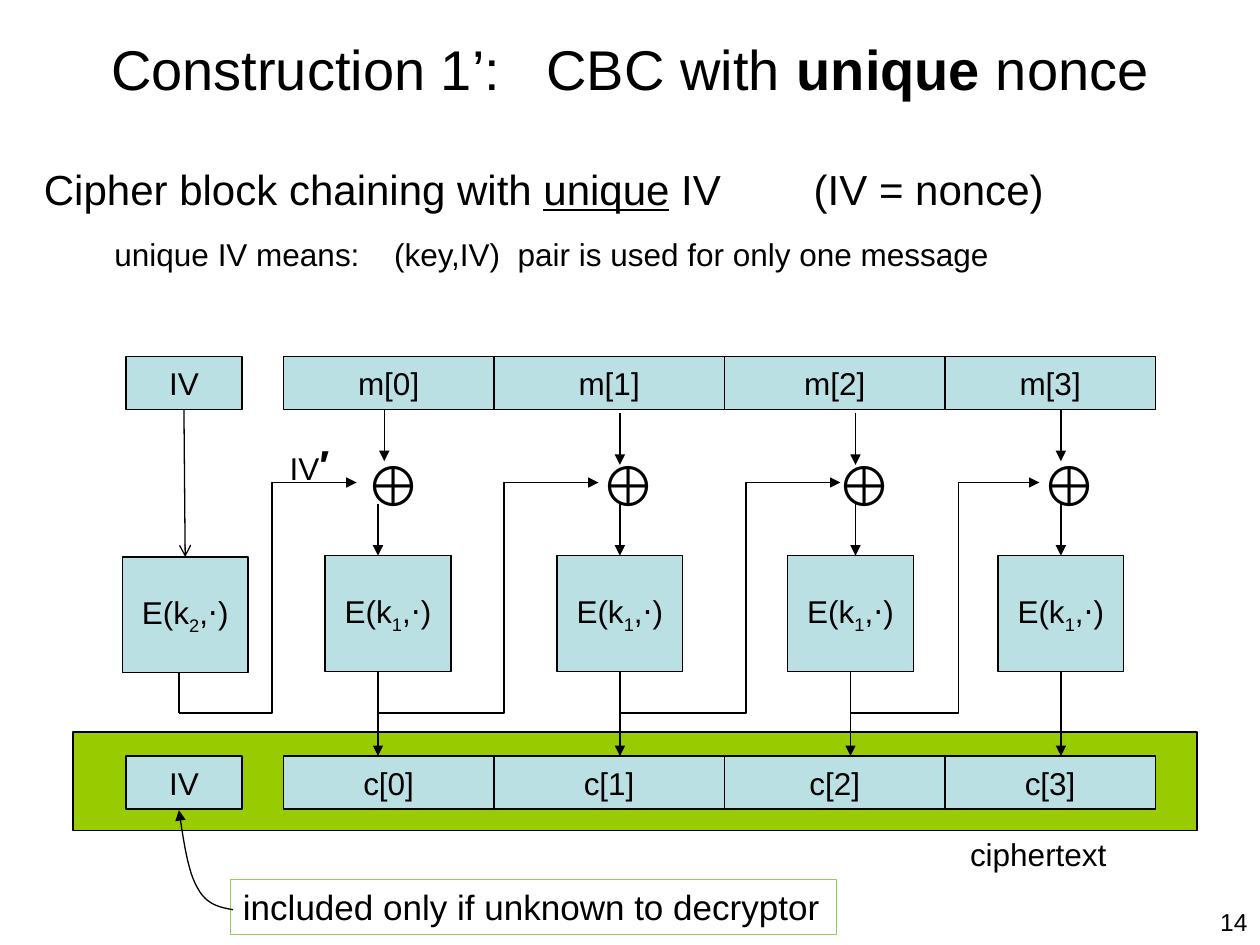
from lxml import etree
from pptx import Presentation
from pptx.dml.color import RGBColor
from pptx.enum import shapes, text
from pptx.oxml.ns import qn
from pptx.util import Inches, Pt

# ---- Content: a run is text or (text, format) ----
TITLE = ["Construction 1’:   CBC with ", ("unique", {"bold": True}), " nonce"]
HEADLINE = ["Cipher block chaining with ", ("unique", {"underline": True}), " IV\t(IV = nonce)"]
MEANING = ["unique IV means:\t(key,IV)  pair is used for only one message"]
IV_PRIME = ["IV", ("′", {"bold": True, "size": 23.9})]
NOTE = "included only if unknown to decryptor"
PAGE_NUMBER = "14"

COLORS = {"ink": "000000", "cell": "BBE0E3", "band": "99CC00", "note": "92D050"}
FONT = "Arial"

# ---- Geometry in inches ----
CELL_EDGES = [2.25, 3.92, 5.75, 7.5, 9.17]
CELL_HEIGHT = 0.42
ROWS = {"m": 2.83, "c": 6}
CIPHER_TOP, CIPHER_WIDTH, CIPHER_HEIGHT = 4.41, 1, 0.92
CIPHER_BOTTOM = CIPHER_TOP + CIPHER_HEIGHT
CHAIN_TOP, CHAIN_BOTTOM = 3.83, 5.66
COLUMNS = [
    {"cipher": 2.58, "message": (3.05, 3.25), "xor_out": 3, "output": 3},
    {"cipher": 4.42, "message": (4.92, 3.28), "xor_out": 4.92, "output": 4.92},
    {"cipher": 6.25, "message": (6.79, 3.28), "xor_out": 6.79, "output": 6.75},
    {"cipher": 7.92, "message": (8.42, 3.25), "xor_out": 8.42, "output": 8.42},
]
CHAINS = [(1.42, 2.16, 2.83), (3, 4, 4.75), (4.92, 5.92, 6.67), (6.75, 7.61, 8.25)]
NOTE_CURVES = [
    [(1.85, 7.22), (1.74, 7.2), (1.64, 7.18), (1.57, 7.05)],
    [(1.57, 7.05), (1.49, 6.92), (1.46, 6.68), (1.42, 6.43)],
]

deck = Presentation()
deck.slide_width, deck.slide_height = Inches(10), Inches(7.5)
page = deck.slides.add_slide(deck.slide_layouts[6])


def color(name):
    return RGBColor.from_string(COLORS[name])


def write(box, runs, size=18, align="LEFT", anchor="TOP", wrap=False, grow=False,
          before=0, tab=None):
    """Fill a shape with one paragraph of formatted runs."""
    frame = box.text_frame
    frame.word_wrap = wrap
    frame.vertical_anchor = getattr(text.MSO_ANCHOR, anchor)
    frame.auto_size = text.MSO_AUTO_SIZE.SHAPE_TO_FIT_TEXT if grow else text.MSO_AUTO_SIZE.NONE
    para = frame.paragraphs[0]
    para.alignment = getattr(text.PP_ALIGN, align)
    para.space_before = Pt(before)
    if tab:
        stops = etree.SubElement(para._p.get_or_add_pPr(), qn("a:tabLst"))
        etree.SubElement(stops, qn("a:tab"), pos=str(Inches(tab)), algn="l")
    for run in [runs] if isinstance(runs, str) else runs:
        words, style = (run, {}) if isinstance(run, str) else run
        span = para.add_run()
        span.text = words
        span.font.name = FONT
        span.font.size = Pt(style.get("size", size))
        span.font.bold = style.get("bold")
        span.font.underline = style.get("underline")
        span.font.color.rgb = color("ink")
        if "baseline" in style:
            span._r.get_or_add_rPr().set("baseline", str(style["baseline"]))


def label(place, runs, **style):
    write(page.shapes.add_textbox(*map(Inches, place)), runs, **style)


def rectangle(place, fill=None, line="ink"):
    box = page.shapes.add_shape(shapes.MSO_SHAPE.RECTANGLE, *map(Inches, place))
    box.shadow.inherit = False
    if fill:
        box.fill.solid()
        box.fill.fore_color.rgb = color(fill)
    else:
        box.fill.background()
    box.line.color.rgb = color(line)
    box.line.width = Pt(0.75)
    return box


def cell(place, runs):
    write(rectangle(place, "cell"), runs, align="CENTER", anchor="MIDDLE")


def cipher(left, top, key):
    cell((left, top, CIPHER_WIDTH, CIPHER_HEIGHT),
         ["E(k", (key, {"baseline": -25000}), ",⋅)"])


def finish_line(item, head):
    item.line.color.rgb = color("ink")
    item.line.width = Pt(0.75)
    if head:
        etree.SubElement(item.line._get_or_add_ln(), qn("a:tailEnd"), type=head)


def arrow(x1, y1, x2, y2, head="triangle"):
    link = page.shapes.add_connector(
        shapes.MSO_CONNECTOR.STRAIGHT, *map(Inches, (x1, y1, x2, y2)))
    finish_line(link, head)
    etree.SubElement(link._element.spPr, qn("a:effectLst"))


def route(points):
    start, *rest = [(Inches(x), Inches(y)) for x, y in points]
    builder = page.shapes.build_freeform(*start)
    builder.add_line_segments(rest, close=False)
    outline = builder.convert_to_shape()
    outline.shadow.inherit = False
    outline.fill.background()
    finish_line(outline, "triangle")


def curve_points(controls, steps=12):
    """Sample a cubic Bezier curve."""
    for step in range(steps + 1):
        t = step / steps
        weights = ((1 - t) ** 3, 3 * t * (1 - t) ** 2, 3 * t * t * (1 - t), t ** 3)
        yield tuple(sum(w * p[axis] for w, p in zip(weights, controls)) for axis in (0, 1))


# ---- Heading, body text and page number ----
label((7.67, 7.15, 2.33, 0.44), PAGE_NUMBER, size=14, align="RIGHT", wrap=True)
label((0.5, 0.08, 9, 0.92), TITLE, size=32, align="CENTER", anchor="MIDDLE", wrap=True)
label((0.25, 1.25, 9.58, 1.33), HEADLINE, size=24, wrap=True, before=4.8, tab=6.11)
label((0.81, 1.82, 7.21, 0.4), MEANING, grow=True, tab=2.22)

# ---- Ciphertext band, message and ciphertext rows ----
rectangle((0.58, 5.81, 8.92, 0.78), "band")
for letter, top in ROWS.items():
    cell((1, top, 0.92, CELL_HEIGHT), "IV")
    for i, (left, right) in enumerate(zip(CELL_EDGES, CELL_EDGES[1:])):
        cell((left, top, right - left, CELL_HEIGHT), f"{letter}[{i}]")
label((7.6, 6.58, 1.65, 0.5), "ciphertext", grow=True)

# ---- One encryption column per message block ----
for column in COLUMNS:
    x, top = column["message"]
    cipher(column["cipher"], CIPHER_TOP, "1")
    label((x - 0.25, 3.53, 0.54, 0.63), "⊕", size=32, grow=True)
    arrow(x, top, x, top + 0.41)
    arrow(column["xor_out"], 4, column["xor_out"], CIPHER_TOP)
    arrow(column["output"], CIPHER_BOTTOM, column["output"], ROWS["c"])

# ---- IV encryption and chaining ----
cipher(0.97, 4.42, "2")
arrow(1.46, 3.25, 1.47, 4.42, head="arrow")
arrow(1.42, CIPHER_BOTTOM, 1.42, CHAIN_BOTTOM, head=None)
label((2.2, 3.43, 0.52, 0.5), IV_PRIME, grow=True)
for start, bend, end in CHAINS:
    route([(start, CHAIN_BOTTOM), (bend, CHAIN_BOTTOM), (bend, CHAIN_TOP), (end, CHAIN_TOP)])

# ---- Note on the transmitted IV ----
write(rectangle((1.83, 6.98, 4.81, 0.44), line="note"), NOTE, size=20, grow=True)
route([point for controls in NOTE_CURVES for point in curve_points(controls)])

deck.save("out.pptx")
